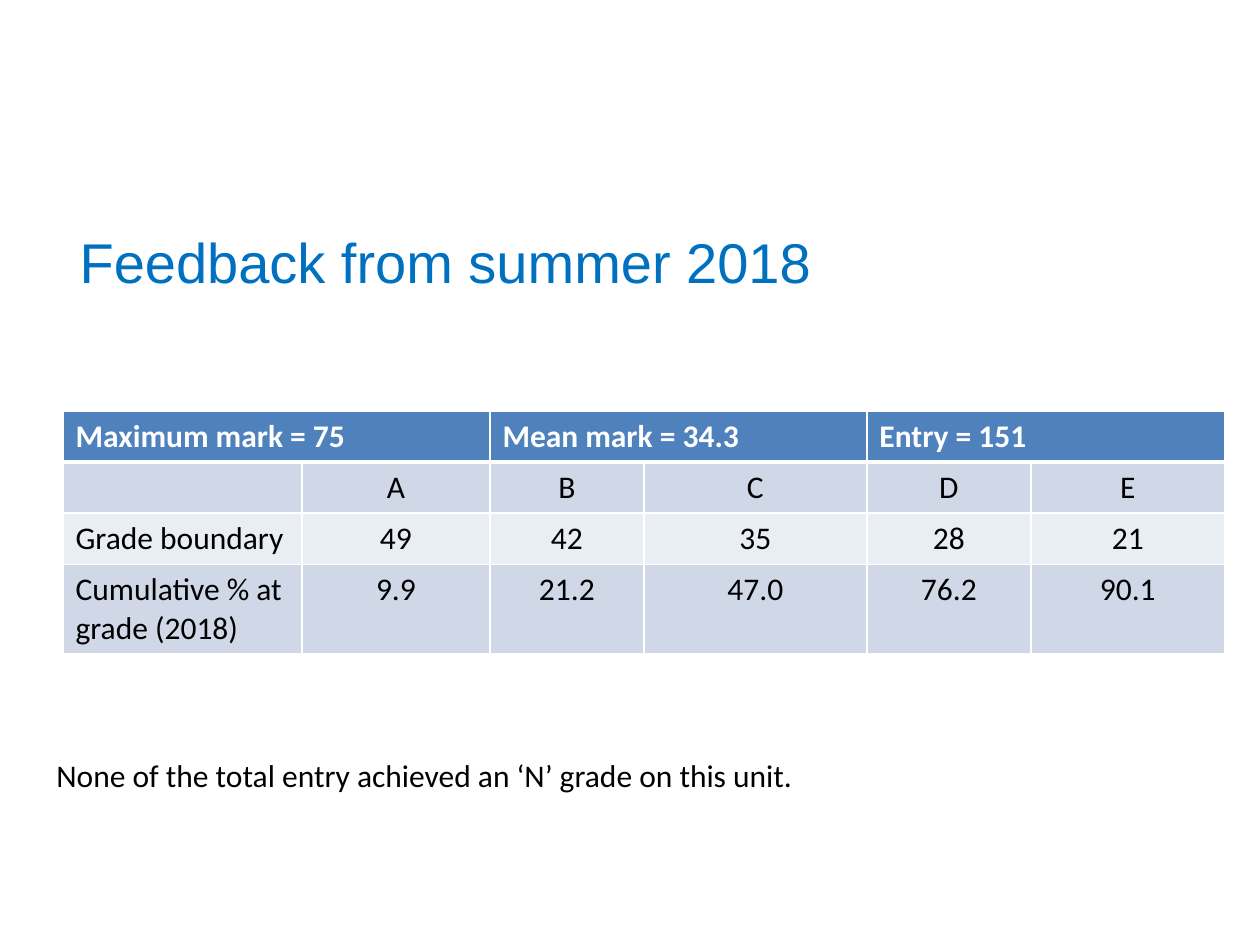
"""Build the exam feedback slide with its grade boundary table."""
from dataclasses import dataclass

from lxml import etree
from pptx import Presentation, util as u
from pptx.dml.color import RGBColor
from pptx.enum import text
from pptx.oxml.ns import qn


@dataclass(frozen=True)
class Theme:
    title: str = "0070C0"
    header: str = "4F81BD"
    band_dark: str = "D0D8E8"
    band_light: str = "E9EDF4"
    white: str = "FFFFFF"
    black: str = "000000"
    title_font: str = "Arial"
    body_font: str = "Calibri"
    title_size: int = 32
    body_size: int = 18
    rule: int = 1
    header_rule: int = 3


T = Theme()
SCALE = 914400 / 126
COLS = (239, 188, 154, 223, 164, 194)
ROWS = (51, 51, 51, 89)
CELLS = (
    ("Maximum mark = 75", "", "Mean mark = 34.3", "", "Entry = 151", ""),
    ("", "A", "B", "C", "D", "E"),
    ("Grade boundary", "49", "42", "35", "28", "21"),
    ("Cumulative % at grade (2018)", "9.9", "21.2", "47.0", "76.2", "90.1"),
)


def px(n):
    return u.Emu(round(n * SCALE))


def write(tf, words, font=T.body_font, size=T.body_size, color=T.black,
          bold=False, align=text.PP_ALIGN.LEFT):
    p = tf.paragraphs[0]
    p.alignment = align
    r = p.add_run()
    r.text = words
    r.font.name, r.font.size, r.font.bold = font, u.Pt(size), bold
    r.font.color.rgb = RGBColor.from_string(color)


def add_title(s, words, left, top, width, height):
    sp = s.shapes.title
    sp.left, sp.top, sp.width, sp.height = map(px, (left, top, width, height))
    tf = sp.text_frame
    tf.vertical_anchor = text.MSO_ANCHOR.TOP
    tf.margin_top = px(12)
    write(tf, words, font=T.title_font, size=T.title_size, color=T.title)


def add_note(s, words, left, top, width, height):
    sp = s.shapes.add_textbox(*map(px, (left, top, width, height)))
    sp.text_frame.word_wrap = True
    write(sp.text_frame, words)


def set_borders(cell, **widths):
    tc_pr = cell._tc.get_or_add_tcPr()
    for side in "LRTB":
        width = u.Pt(widths.get(side, T.rule))
        ln = etree.SubElement(tc_pr, qn(f"a:ln{side}"), w=str(width))
        fill = etree.SubElement(ln, qn("a:solidFill"))
        etree.SubElement(fill, qn("a:srgbClr"), val=T.white)


def format_cell(cell, words, row, col):
    header = row == 0
    borders = {0: {"B": T.header_rule}, 1: {"T": T.header_rule}}
    set_borders(cell, **borders.get(row, {}))
    band = T.band_dark if row % 2 else T.band_light
    cell.fill.solid()
    cell.fill.fore_color.rgb = RGBColor.from_string(T.header if header else band)
    if words:
        centred = col > 0 and not header
        write(cell.text_frame, words, bold=header,
              color=T.white if header else T.black,
              align=text.PP_ALIGN.CENTER if centred else text.PP_ALIGN.LEFT)


def add_grades(s, left, top):
    frame = s.shapes.add_table(len(ROWS), len(COLS), px(left), px(top),
                               px(sum(COLS)), px(sum(ROWS)))
    table = frame.table
    for column, width in zip(table.columns, COLS):
        column.width = px(width)
    for row, height in zip(table.rows, ROWS):
        row.height = px(height)
    for i, line in enumerate(CELLS):
        for j, words in enumerate(line):
            format_cell(table.cell(i, j), words, i, j)
    for j in range(0, len(COLS), 2):
        table.cell(0, j).merge(table.cell(0, j + 1))


def main():
    prs = Presentation()
    prs.slide_width, prs.slide_height = px(1260), px(945)
    s = prs.slides.add_slide(prs.slide_layouts[5])
    add_title(s, "Feedback from summer 2018", 67, 215, 1160, 166)
    add_grades(s, 63, 411)
    add_note(s, "None of the total entry achieved an ‘N’ grade on this unit.",
             44, 750, 1191, 50)
    prs.save("out.pptx")


if __name__ == "__main__":
    main()
